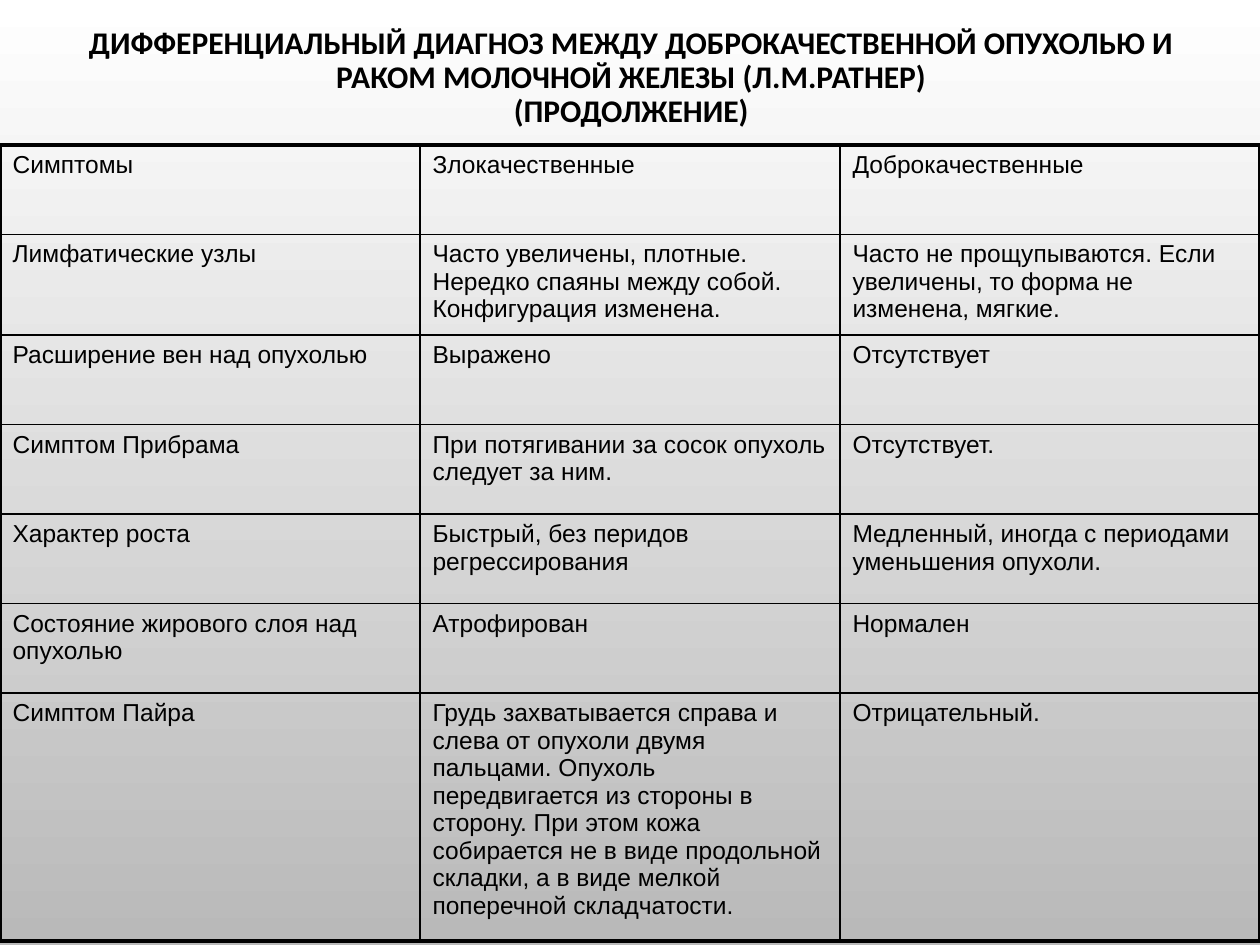
from pptx import Presentation, util as u
from pptx.dml.color import RGBColor
from pptx.enum import text
from pptx.oxml import parse_xml
from pptx.oxml.ns import nsdecls

# Content
TITLE = ("ДИФФЕРЕНЦИАЛЬНЫЙ ДИАГНОЗ МЕЖДУ ДОБРОКАЧЕСТВЕННОЙ ОПУХОЛЬЮ И "
         "РАКОМ МОЛОЧНОЙ ЖЕЛЕЗЫ (Л.М.РАТНЕР)\n(ПРОДОЛЖЕНИЕ)")
SYMPTOMS = [
    ("Симптомы", "Злокачественные", "Доброкачественные"),
    ("Лимфатические узлы",
     "Часто увеличены, плотные. Нередко спаяны между собой. Конфигурация изменена.",
     "Часто не прощупываются. Если увеличены, то форма не изменена, мягкие."),
    ("Расширение вен над опухолью", "Выражено", "Отсутствует"),
    ("Симптом Прибрама", "При потягивании за сосок опухоль следует за ним.",
     "Отсутствует."),
    ("Характер роста", "Быстрый, без перидов регрессирования",
     "Медленный, иногда с периодами уменьшения опухоли."),
    ("Состояние жирового слоя над опухолью", "Атрофирован", "Нормален"),
    ("Симптом Пайра",
     "Грудь захватывается справа и слева от опухоли двумя пальцами. Опухоль "
     "передвигается из стороны в сторону. При этом кожа собирается не в виде "
     "продольной складки, а в виде мелкой поперечной складчатости.",
     "Отрицательный."),
]
ROW_HEIGHTS = [0.71, 0.8, 0.71, 0.71, 0.71, 0.71, 1.97]
COLORS = {"ink": "000000", "top": "FFFFFF", "bottom": "B9B9B9"}
OUTER, INNER = 2.25, 1


def write(frame, words, font, size, bold=False, align=text.PP_ALIGN.LEFT, spacing=1.0):
    paragraph = frame.paragraphs[0]
    paragraph.text = words
    paragraph.alignment = align
    paragraph.line_spacing = spacing
    paragraph.space_before = u.Pt(0)
    for run in paragraph.runs:
        run.font.name, run.font.size, run.font.bold = font, u.Pt(size), bold
        run.font.color.rgb = RGBColor.from_string(COLORS["ink"])


def draw_borders(cell, on_edge):
    properties = cell._tc.get_or_add_tcPr()
    for side in "LRTB":
        width = u.Pt(OUTER if on_edge[side] else INNER)
        properties.append(parse_xml(
            f'<a:ln{side} {nsdecls("a")} w="{width}"><a:solidFill>'
            f'<a:srgbClr val="{COLORS["ink"]}"/></a:solidFill></a:ln{side}>'))


deck = Presentation()
deck.slide_width, deck.slide_height = u.Inches(10), u.Inches(7.5)
slide = deck.slides.add_slide(deck.slide_layouts[5])

# Background gradient, light at the top
backdrop = slide.background.fill
backdrop.gradient()
backdrop.gradient_angle = 270
for stop, shade, position in zip(backdrop.gradient_stops, ("top", "bottom"), (0, 1)):
    stop.color.rgb = RGBColor.from_string(COLORS[shade])
    stop.position = position

# Title
heading = slide.shapes.title
heading.left, heading.top = u.Inches(0.51), u.Inches(0)
heading.width, heading.height = u.Inches(9), u.Inches(1.25)
heading.text_frame.vertical_anchor = text.MSO_ANCHOR.MIDDLE
heading.text_frame.auto_size = text.MSO_AUTO_SIZE.NONE
write(heading.text_frame, TITLE, font="Calibri", size=18, bold=True,
      align=text.PP_ALIGN.CENTER, spacing=0.9)

# Symptom table
last_row, last_column = len(SYMPTOMS) - 1, len(SYMPTOMS[0]) - 1
symptoms = slide.shapes.add_table(
    last_row + 1, last_column + 1, u.Inches(0), u.Inches(1.15),
    u.Inches(10), u.Inches(sum(ROW_HEIGHTS))).table
symptoms.first_row = symptoms.horz_banding = False
for row, height in zip(symptoms.rows, ROW_HEIGHTS):
    row.height = u.Inches(height)
for r, entries in enumerate(SYMPTOMS):
    for c, entry in enumerate(entries):
        cell = symptoms.cell(r, c)
        write(cell.text_frame, entry, font="Arial", size=14)
        draw_borders(cell, {"L": c == 0, "R": c == last_column,
                            "T": r == 0, "B": r == last_row})
        cell.fill.background()

deck.save("out.pptx")
